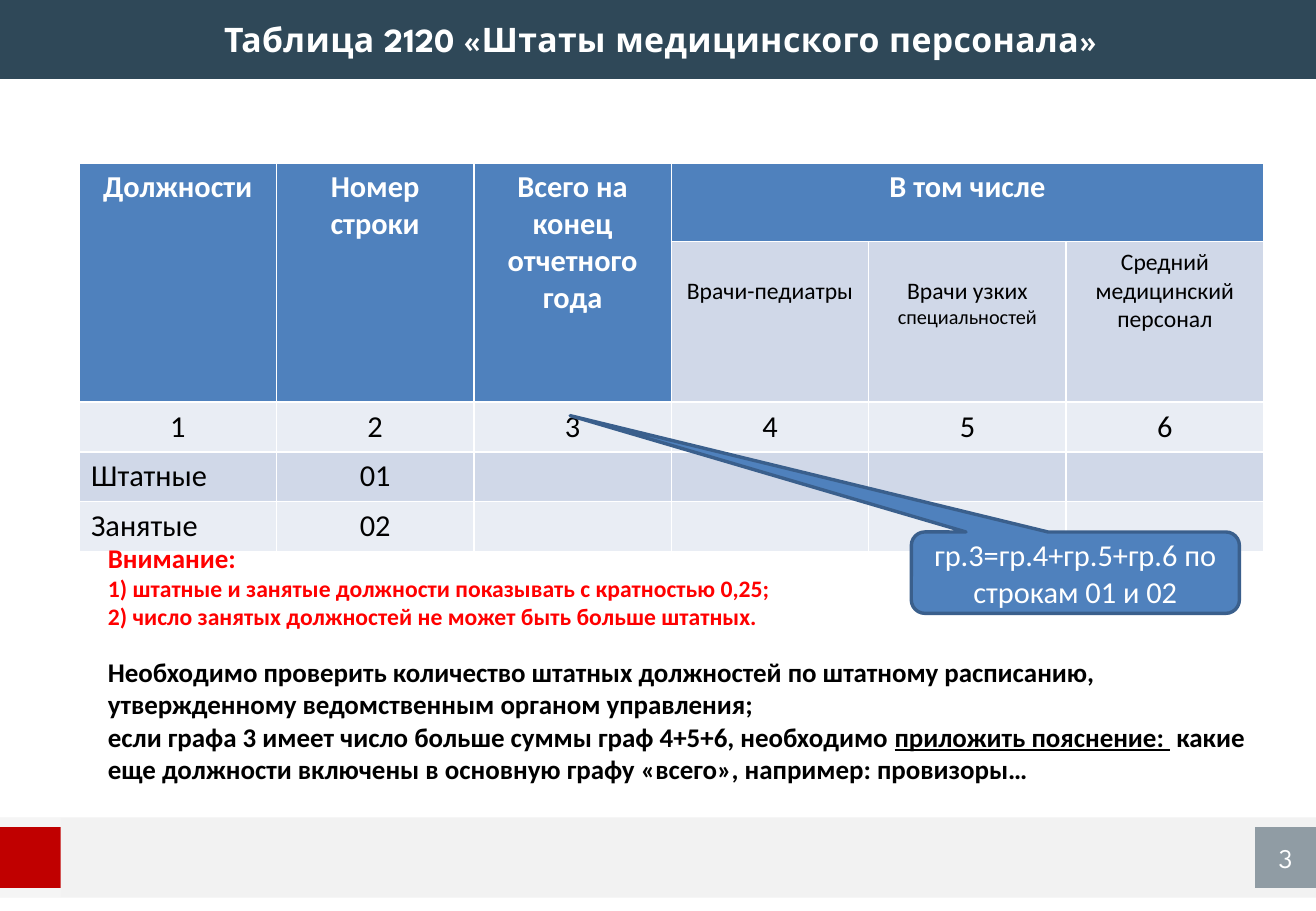
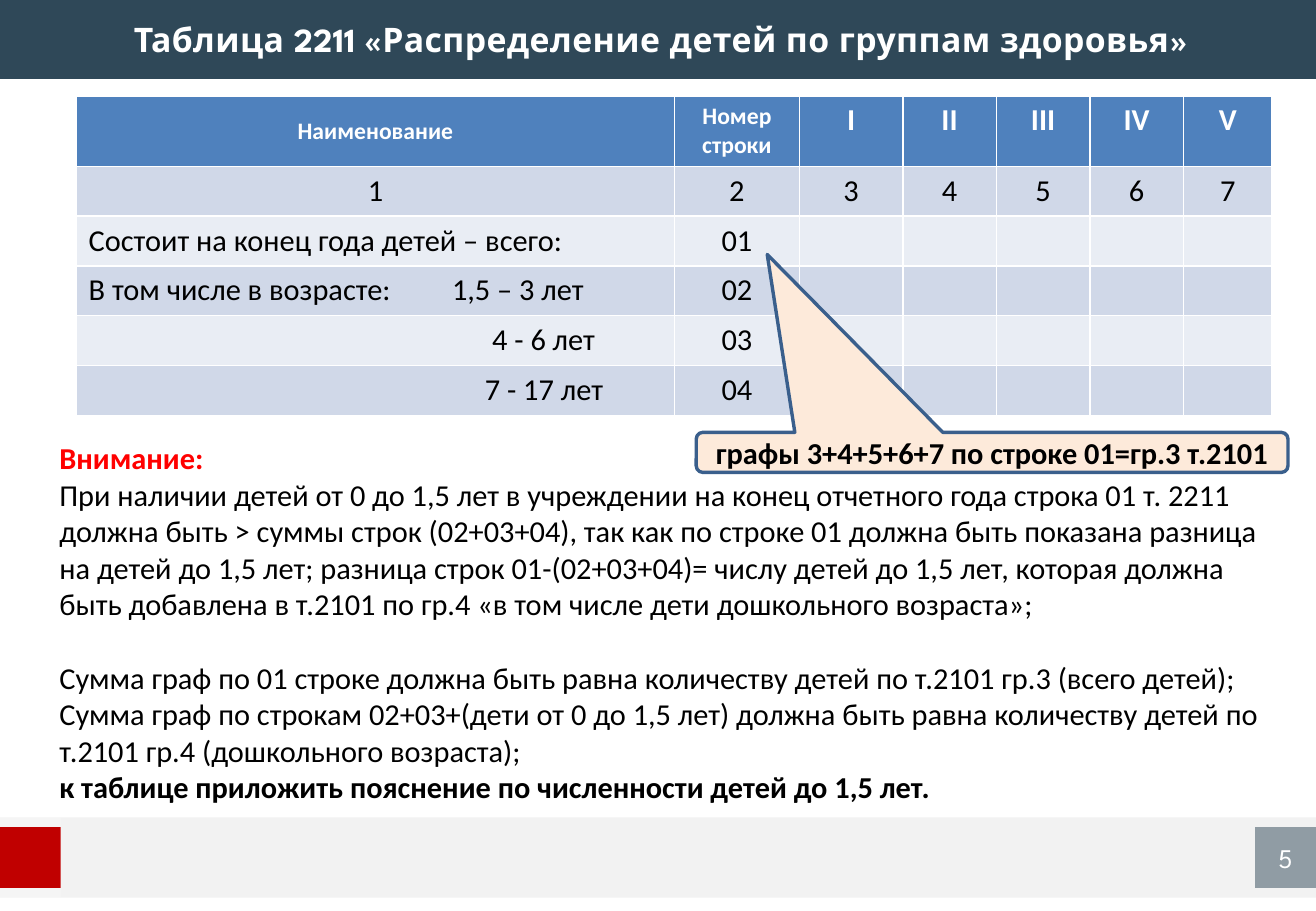
from dataclasses import dataclass

from lxml.etree import SubElement
from pptx import Presentation
from pptx.dml.color import RGBColor
from pptx.enum.shapes import MSO_SHAPE as Shape
from pptx.enum.text import MSO_ANCHOR as Anchor, PP_ALIGN as Align
from pptx.oxml.ns import qn
from pptx.util import Inches, Pt

COLORS = {
    "white": "FFFFFF",
    "black": "000000",
    "red": "FF0000",
    "accent": "C00000",
    "navy": "2F4858",
    "footer": "F2F2F2",
    "blue": "4F81BD",
    "outline": "3A5F8C",
    "peach": "FDEADA",
    "band_dark": "D0D8E8",
    "band_light": "E9EDF4",
}
BODY_FONT = "Calibri"
TITLE_FONT = "League Spartan"
SLIDE_WIDTH, SLIDE_HEIGHT = 10.83, 7.5
BAND_HEIGHT = 0.65
FOOTER_TOP, FOOTER_HEIGHT = 6.73, 0.66
TILE_TOP, TILE_SIZE = 6.81, 0.5


@dataclass
class Run:
    """A piece of text with one format."""
    text: str
    size: float = 18
    color: str = "black"
    bold: bool = False
    underline: bool = False
    font: str = BODY_FONT


def rgb(name):
    """Return the named colour."""
    return RGBColor.from_string(COLORS[name])


def header(text, size=18):
    """Return a bold white run for a header cell."""
    return Run(text, size, "white", bold=True)


def write(paragraph, runs, align=Align.LEFT, space_before=0):
    """Fill a paragraph with runs."""
    paragraph.alignment = align
    paragraph.space_before = Pt(space_before)
    for item in runs:
        run = paragraph.add_run()
        run.text = item.text
        font = run.font
        font.name, font.size = item.font, Pt(item.size)
        font.bold, font.underline = item.bold, item.underline
        font.color.rgb = rgb(item.color)


def add_block(slide, kind, box, color, outline=None, opacity=100):
    """Add a flat preset shape."""
    shape = slide.shapes.add_shape(kind, *map(Inches, box))
    shape.shadow.inherit = False
    shape.fill.solid()
    shape.fill.fore_color.rgb = rgb(color)
    if opacity < 100:
        fill_color = shape.element.spPr.find(".//" + qn("a:srgbClr"))
        SubElement(fill_color, qn("a:alpha"), val=str(opacity * 1000))
    if outline:
        shape.line.color.rgb = rgb(outline)
        shape.line.width = Pt(2)
    else:
        shape.line.fill.background()
    return shape


def decorate_layout(slide):
    """Put the shared bands and title position on the layout of the slide."""
    layout = slide.slide_layout
    for placeholder in list(layout.placeholders):
        if placeholder.placeholder_format.idx >= 10:
            placeholder.element.getparent().remove(placeholder.element)
    title = layout.placeholders[0]
    title.left, title.top = Inches(0.65), 0
    title.width, title.height = Inches(9.57), Inches(BAND_HEIGHT)
    bands = [
        ((0, FOOTER_TOP, SLIDE_WIDTH, FOOTER_HEIGHT), "footer", 100),
        ((0, 0, SLIDE_WIDTH, BAND_HEIGHT), "navy", 100),
        ((0, FOOTER_TOP, TILE_SIZE, FOOTER_HEIGHT), "white", 30),
        ((0, TILE_TOP, TILE_SIZE, TILE_SIZE), "accent", 100),
    ]
    tree = title.element.getparent()
    for position, (box, color, opacity) in enumerate(bands, start=2):
        band = add_block(slide, Shape.RECTANGLE, box, color, opacity=opacity)
        tree.insert(position, band.element)


def add_title(slide, text):
    """Fill the title placeholder."""
    frame = slide.shapes.title.text_frame
    frame.vertical_anchor = Anchor.MIDDLE
    frame.margin_left = frame.margin_right = 0
    frame.margin_top = frame.margin_bottom = 0
    paragraph = frame.paragraphs[0]
    write(paragraph, [Run(text, 20, "white", bold=True, font=TITLE_FONT)], Align.CENTER)
    paragraph.runs[0].font._element.set("spc", "20")


def add_page_number(slide, number):
    """Add the page number tile at the lower right."""
    box = (SLIDE_WIDTH - TILE_SIZE, TILE_TOP, TILE_SIZE, TILE_SIZE)
    frame = add_block(slide, Shape.RECTANGLE, box, "navy", opacity=50).text_frame
    frame.vertical_anchor = Anchor.MIDDLE
    write(frame.paragraphs[0], [Run(str(number), 16, "white", font=TITLE_FONT)], Align.CENTER)


def add_grid(slide, left, top, widths, heights):
    """Add a table with the given column widths and row heights."""
    box = map(Inches, (left, top, sum(widths), sum(heights)))
    table = slide.shapes.add_table(len(heights), len(widths), *box).table
    for column, width in zip(table.columns, widths):
        column.width = Inches(width)
    for row, height in zip(table.rows, heights):
        row.height = Inches(height)
    return table


def fill_cell(cell, runs, color, align=Align.CENTER):
    """Set the fill and the text of a cell."""
    cell.fill.solid()
    cell.fill.fore_color.rgb = rgb(color)
    write(cell.text_frame.paragraphs[0], runs, align)


def fill_rows(table, first_row, rows, colors):
    """Fill data rows in alternating colours; row labels go left."""
    for offset, values in enumerate(rows):
        for column in range(len(table.columns)):
            text = values[column] if column < len(values) else ""
            align = Align.LEFT if offset and column == 0 else Align.CENTER
            runs = [Run(text)] if text else []
            fill_cell(table.cell(first_row + offset, column), runs, colors[offset % 2], align)


def set_tab(cell, position):
    """Set one tab stop in the first paragraph of a cell."""
    properties = cell.text_frame.paragraphs[0]._p.get_or_add_pPr()
    stops = SubElement(properties, qn("a:tabLst"))
    SubElement(stops, qn("a:tab"), pos=str(Inches(position)), algn="l")


def add_notes_text(slide, box, paragraphs):
    """Add a text box from pairs of space before and runs."""
    frame = slide.shapes.add_textbox(*map(Inches, box)).text_frame
    frame.word_wrap = True
    for index, (space_before, runs) in enumerate(paragraphs):
        paragraph = frame.add_paragraph() if index else frame.paragraphs[0]
        write(paragraph, runs, space_before=space_before)


def add_callout(slide, box, tip, color, run):
    """Add a rounded callout whose tip is relative to its box."""
    shape = add_block(slide, Shape.ROUNDED_RECTANGULAR_CALLOUT, box, color, "outline")
    shape.adjustments[0], shape.adjustments[1] = tip
    shape.text_frame.word_wrap = True
    shape.text_frame.vertical_anchor = Anchor.MIDDLE
    write(shape.text_frame.paragraphs[0], [run], Align.CENTER)


def add_staff_table(slide, left, top):
    """Add the table of staff positions."""
    table = add_grid(slide, left, top, [1.625] * 6, [0.65, 0.77] + [0.41] * 3)
    titles = ["Должности", "Номер строки", "Всего на конец отчетного года", "В том числе"]
    for column, text in enumerate(titles):
        fill_cell(table.cell(0, column), [header(text)], "blue")
    for column in range(3):
        table.cell(0, column).merge(table.cell(1, column))
    table.cell(0, 3).merge(table.cell(0, 5))
    groups = [
        (0.29, [Run("Врачи-педиатры", 14)]),
        (0.29, [Run("Врачи узких ", 14), Run("специальностей", 12)]),
        (0.05, [Run("Средний медицинский персонал", 14)]),
    ]
    for column, (margin, runs) in enumerate(groups, start=3):
        fill_cell(table.cell(1, column), runs, "band_dark")
        table.cell(1, column).margin_top = Inches(margin)
    rows = ["123456", ["Штатные", "01"], ["Занятые", "02"]]
    fill_rows(table, 2, rows, ["band_light", "band_dark"])


def add_health_table(slide, left, top):
    """Add the table of children by health group."""
    widths = [4.92, 1.03, 0.85, 0.77, 0.77, 0.77, 0.73]
    table = add_grid(slide, left, top, widths, [0.58] + [0.41] * 5)
    titles = [("Наименование", 14), ("Номер строки", 14)]
    titles += [(numeral, 18) for numeral in ("I", "II", "III", "IV", "V")]
    for column, (text, size) in enumerate(titles):
        fill_cell(table.cell(0, column), [header(text, size)], "blue")
    table.cell(0, 0).vertical_anchor = Anchor.MIDDLE
    rows = [
        "1234567",
        ["Состоит на конец года детей – всего:", "01"],
        ["В том числе в возрасте:\t1,5 – 3 лет", "02"],
        ["\t4 - 6 лет", "03"],
        ["\t7 - 17 лет", "04"],
    ]
    fill_rows(table, 1, rows, ["band_dark", "band_light"])
    for row, position in enumerate((2.99, 3.32, 3.26), start=3):
        set_tab(table.cell(row, 0), position)


def build_staff_slide(slide):
    """Build the slide on medical staff."""
    add_title(slide, "Таблица 2120 «Штаты медицинского персонала»")
    add_page_number(slide, 3)
    add_staff_table(slide, 0.65, 1.34)
    add_notes_text(slide, (0.79, 4.41, 9.67, 2.39), [
        (0, [Run("Внимание:", 16, "red", True)]),
        (0, [Run("1) штатные и занятые должности показывать с кратностью 0,25;", 14, "red", True)]),
        (0, [Run("2) число занятых должностей не может быть больше штатных.", 14, "red", True)]),
        (14.6, [Run("Необходимо проверить количество штатных должностей по штатному расписанию, "
                    "утвержденному ведомственным органом управления;", 16, bold=True)]),
        (0, [Run("если графа 3 имеет число больше суммы граф 4+5+6, необходимо ", 16, bold=True),
             Run("приложить пояснение: ", 16, bold=True, underline=True),
             Run(" какие еще должности включены в основную графу «всего», "
                 "например: провизоры…", 16, bold=True)]),
    ])
    add_callout(slide, (7.5, 4.38, 2.7, 0.67), (-1.54, -1.93), "blue",
                Run("гр.3=гр.4+гр.5+гр.6 по строкам 01 и 02", color="white"))


def build_health_slide(slide):
    """Build the slide on health groups."""
    add_title(slide, "Таблица 2211 «Распределение детей по группам здоровья»")
    add_page_number(slide, 5)
    add_health_table(slide, 0.63, 0.79)
    add_notes_text(slide, (0.39, 3.57, 10.28, 3.13), [
        (0, [Run("Внимание:", color="red", bold=True)]),
        (0, [Run("При наличии детей от 0 до 1,5 лет в учреждении на конец отчетного года "
                 "строка 01 т. 2211 должна быть > суммы строк (02+03+04), так как по строке 01 "
                 "должна быть показана разница на детей до 1,5 лет; разница строк "
                 "01-(02+03+04)= числу детей до 1,5 лет, которая должна быть добавлена "
                 "в т.2101 по гр.4 «в том числе дети дошкольного возраста»;")]),
        (22, [Run("Сумма граф по 01 строке должна быть равна количеству детей "
                  "по т.2101 гр.3 (всего детей);")]),
        (0, [Run("Сумма граф по строкам 02+03+(дети от 0 до 1,5 лет) должна быть равна "
                 "количеству детей по т.2101 гр.4 (дошкольного возраста);")]),
        (0, [Run("к таблице приложить пояснение по численности детей до 1,5 лет.", bold=True)]),
    ])
    add_callout(slide, (5.73, 3.56, 4.87, 0.33), (-0.38, -4.94), "peach",
                Run("графы 3+4+5+6+7 по строке 01=гр.3 т.2101", bold=True))


def main():
    """Build and save the presentation."""
    presentation = Presentation()
    presentation.slide_width = Inches(SLIDE_WIDTH)
    presentation.slide_height = Inches(SLIDE_HEIGHT)
    layout = presentation.slide_layouts[5]
    slides = [presentation.slides.add_slide(layout) for _ in range(2)]
    decorate_layout(slides[0])
    build_staff_slide(slides[0])
    build_health_slide(slides[1])
    presentation.save("out.pptx")


if __name__ == "__main__":
    main()
